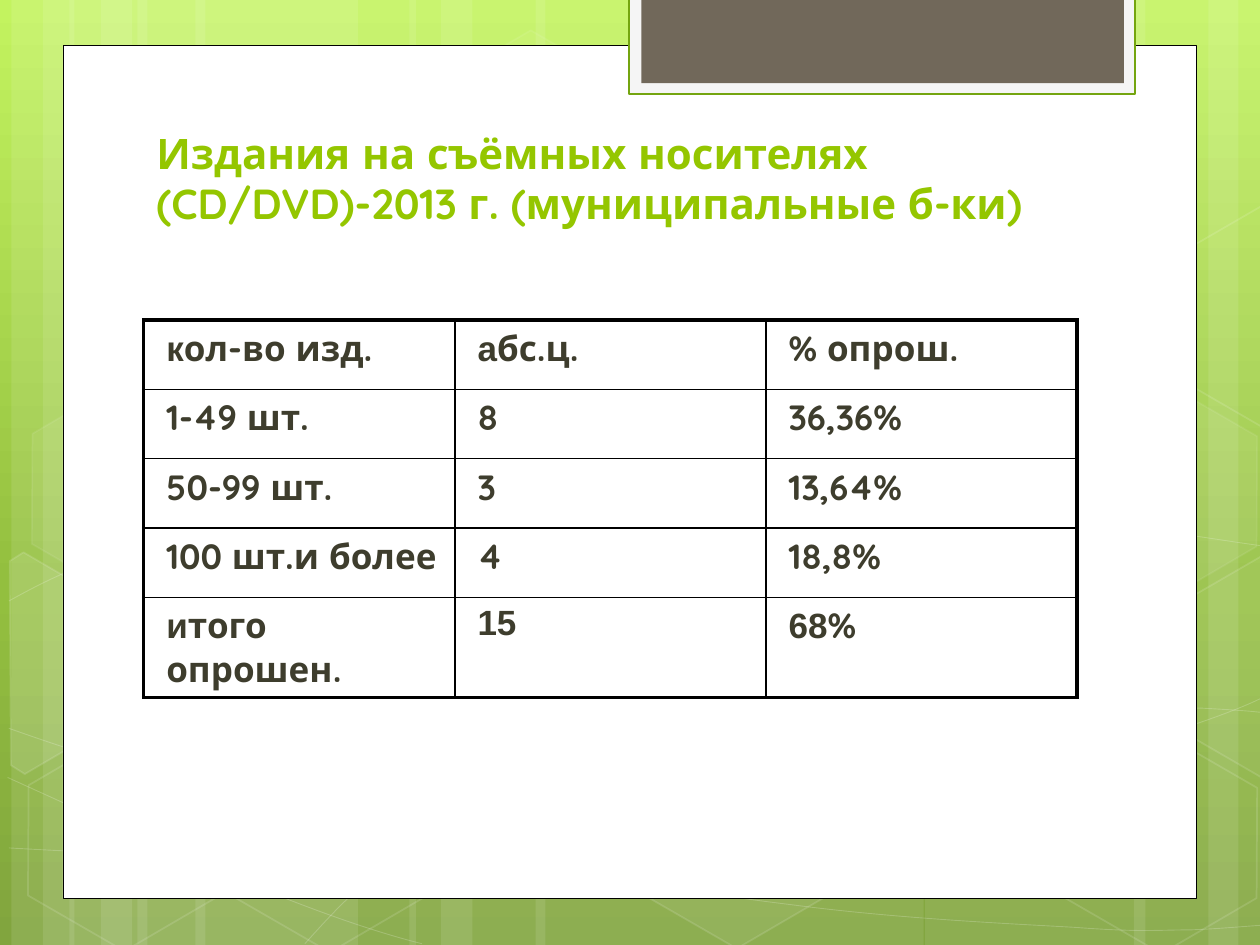
from copy import deepcopy
from dataclasses import dataclass
from math import cos, radians, sin

from lxml.etree import SubElement
from pptx import Presentation
from pptx.dml.color import RGBColor as RGB
from pptx.enum.shapes import MSO_SHAPE as SHAPE
from pptx.enum.text import MSO_ANCHOR, MSO_AUTO_SIZE, PP_ALIGN
from pptx.oxml.ns import qn
from pptx.util import Inches, Pt

COLS, ROWS = 10, 7.5
TILT = 30


@dataclass(frozen=True)
class Theme:
    white: str = "FFFFFF"
    black: str = "000000"
    frame: str = "F5F5F5"
    green: str = "74A510"
    brown: str = "71685A"
    title: str = "94C600"
    text: str = "3E3D2D"
    backdrop: tuple = ((0, "C3F35F"), (0.62, "93BF3F"), (1, "81A53E"))
    head_font: str = "Quicksand"
    plain_font: str = "Arial"
    title_size: float = 24
    text_size: float = 20
    thin: float = 1
    thick: float = 2.25


class Deck:
    def __init__(self, theme):
        self.theme = theme
        self.prs = Presentation()
        self.prs.slide_width = Inches(COLS)
        self.prs.slide_height = Inches(ROWS)
        self.col = self.prs.slide_width / COLS
        self.row = self.prs.slide_height / ROWS
        self.s = self.prs.slides.add_slide(self.prs.slide_layouts[5])

    def box(self, x, y, w, h):
        return [int(v) for v in (x * self.col, y * self.row, w * self.col, h * self.row)]

    def background(self):
        fill = self.s.background.fill
        fill.gradient()
        fill.gradient_angle = 270
        stops = next(self.s.background._cSld.iter(qn("a:gsLst")))
        stops.append(deepcopy(stops[-1]))
        for stop, (position, color) in zip(fill.gradient_stops, self.theme.backdrop):
            stop.color.rgb = RGB.from_string(color)
            stop.position = position

    def paint(self, fill, color, alpha):
        if not alpha:
            fill.background()
            return
        fill.solid()
        fill.fore_color.rgb = RGB.from_string(color)
        if alpha < 100:
            clr = fill._xPr.find(qn("a:solidFill"))[0]
            SubElement(clr, qn("a:alpha"), val=str(alpha * 1000))

    def style(self, sp, color, alpha, line, width, line_alpha):
        sp.shadow.inherit = False
        self.paint(sp.fill, color, alpha)
        self.paint(sp.line.fill, line, line_alpha)
        if line_alpha:
            sp.line.width = Pt(width)

    def shape(self, kind, at, color, alpha=100, line=None, width=1, line_alpha=0):
        sp = self.s.shapes.add_shape(kind, *self.box(*at))
        self.style(sp, color, alpha, line, width, line_alpha)
        return sp

    def hexagon(self, x, y, alpha, line_alpha):
        white = self.theme.white
        sp = self.shape(SHAPE.HEXAGON, (x, y, 1.75, 1.52), white, alpha, white, 1, line_alpha)
        sp.adjustments[0] = 0.285
        sp.rotation = TILT

    def outline(self, points, closed, alpha, width, line_alpha):
        pts = [(int(x * self.col), int(y * self.row)) for x, y in points]
        fb = self.s.shapes.build_freeform(*pts[0])
        fb.add_line_segments(pts[1:], close=closed)
        sp = fb.convert_to_shape()
        self.style(sp, self.theme.white, alpha, self.theme.white, width, line_alpha)
        return sp

    def curve(self, nodes):
        sp = self.outline(nodes, False, 0, 0.5, 20)
        lines = list(sp._element.iter(qn("a:lnTo")))
        for i in range(0, len(lines), 3):
            bezier = SubElement(lines[i].getparent(), qn("a:cubicBezTo"))
            for line in lines[i:i + 3]:
                bezier.append(line[0])
                line.getparent().remove(line)

    def cut_hexagon(self, points, center, alpha):
        cx, cy = center
        c, k = cos(radians(TILT)), sin(radians(TILT))
        upright = [(cx + (x - cx) * c + (y - cy) * k, cy - (x - cx) * k + (y - cy) * c)
                   for x, y in points]
        self.outline(upright, True, alpha, 1, 12).rotation = TILT

    def run(self, p, text, font, size, color):
        r = p.add_run()
        r.text = text
        r.font.name, r.font.size, r.font.bold = font, Pt(size), True
        r.font.color.rgb = RGB.from_string(color)

    def title(self, text, at):
        sp = self.s.shapes.title
        sp._element.getparent().append(sp._element)
        sp.left, sp.top, sp.width, sp.height = self.box(*at)
        tf = sp.text_frame
        tf.word_wrap = True
        tf.auto_size = MSO_AUTO_SIZE.NONE
        tf.vertical_anchor = MSO_ANCHOR.BOTTOM
        p = tf.paragraphs[0]
        p.alignment = PP_ALIGN.LEFT
        self.run(p, text, self.theme.head_font, self.theme.title_size, self.theme.title)

    def borders(self, cell, edges):
        tcPr = cell._tc.get_or_add_tcPr()
        for side, outer in edges:
            width = self.theme.thick if outer else self.theme.thin
            ln = SubElement(tcPr, qn(f"a:ln{side}"), w=str(Pt(width)))
            SubElement(SubElement(ln, qn("a:solidFill")), qn("a:srgbClr"), val=self.theme.black)

    def table(self, rows, at, row_height):
        n, m = len(rows), len(rows[0])
        frame = self.s.shapes.add_table(n, m, *self.box(*at))
        table = frame.table
        table.first_row = table.horz_banding = False
        for i, row in enumerate(rows):
            table.rows[i].height = int(row_height * self.row)
            for j, (plain, styled) in enumerate(row):
                cell = table.cell(i, j)
                self.borders(cell, (("L", j == 0), ("R", j == m - 1),
                                    ("T", i == 0), ("B", i == n - 1)))
                cell.fill.background()
                p = cell.text_frame.paragraphs[0]
                p.space_before = Pt(self.theme.text_size * 0.2)
                pPr = p._p.get_or_add_pPr()
                pPr.set("marL", str(Inches(0.08)))
                pPr.set("indent", "0")
                for text, font in ((plain, self.theme.plain_font), (styled, self.theme.head_font)):
                    if text:
                        self.run(p, text, font, self.theme.text_size, self.theme.text)
        frame.height = int(at[3] * self.row)


STRIPES = [(x + shift, w) for shift in (0, 0.46)
           for x, w in ((1.09, 1.75), (0.09, 0.5), (0.34, 0.83))]
STRIPES += [(7.34, 1.75), (9.59, 0.5), (9, 0.83), (4.25, 3.08), (3.25, 0.5), (3.5, 0.83)]
CURVES = [
    [(0.07, 6.73), (0.61, 6.76), (1.15, 6.79), (1.9, 6.78), (2.65, 6.77), (3.58, 6.75),
     (4.58, 6.65), (5.58, 6.55), (7, 6.36), (7.92, 6.17), (8.83, 5.98), (9.77, 5.68), (10.07, 5.51)],
    [(0.07, 4.77), (0.36, 4.61), (0.65, 4.46), (1.21, 4.31), (1.78, 4.16), (2.59, 3.94),
     (3.47, 3.87), (4.36, 3.8), (5.44, 3.79), (6.54, 3.87), (7.64, 3.95), (9.47, 4.26), (10.07, 4.34)],
    [(0.06, 6.17), (1.27, 6.72), (2.47, 7.27), (3.35, 7.49)],
    [(0.07, 5.78), (0.38, 5.89), (0.7, 6), (1.28, 6.16), (1.86, 6.31), (2.73, 6.56),
     (3.57, 6.73), (4.4, 6.9), (5.45, 7.08), (6.28, 7.18), (7.11, 7.29), (8, 7.33),
     (8.53, 7.36), (9.06, 7.4), (9.19, 7.38), (9.45, 7.38), (9.71, 7.37), (9.89, 7.35), (10.07, 7.34)],
    [(2.42, 7.49), (2.6, 7.29), (2.78, 7.09), (3.02, 6.91), (3.26, 6.72), (3.6, 6.53),
     (3.88, 6.39), (4.16, 6.25), (4.33, 6.19), (4.69, 6.09), (5.06, 5.99), (5.73, 5.85),
     (6.08, 5.78), (6.44, 5.71), (6.49, 5.71), (6.8, 5.69), (7.11, 5.66), (7.6, 5.63),
     (7.94, 5.62), (8.29, 5.61), (8.86, 5.62), (8.86, 5.62), (9.08, 5.62), (9.31, 5.62),
     (9.53, 5.62), (9.71, 5.63), (9.88, 5.64), (9.97, 5.65), (10.06, 5.66), (10.03, 5.65), (10.06, 5.66)],
]
HEXAGONS = [(3.34, 0.36, 4, 8), (4.97, 5.89, 6, 12), (0.11, 5.91, 0, 12), (0.14, 3.12, 7, 8),
            (1.74, 5.92, 0, 12), (7.53, 4.53, 10, 12), (8.34, 5.93, 0, 12), (8.34, 3.14, 7, 8)]
CUT_HEXAGONS = [
    ([(0.08, 4.45), (0.19, 4.38), (0.96, 4.83), (0.95, 5.7), (0.2, 6.14), (0.09, 6.07)],
     (0.36, 5.36), 10),
    ([(9.26, 4.85), (10.02, 4.41), (10.09, 4.46), (10.09, 6.13), (10.02, 6.17), (9.26, 5.73)],
     (9.85, 5.2), 4),
    ([(9.26, 2.07), (10.02, 1.63), (10.1, 1.68), (10.09, 3.35), (10.02, 3.39), (9.26, 2.95)],
     (9.85, 2.41), 0),
]
EDITIONS = [
    [("к", "ол-во изд."), ("а", "бс.ц."), ("", "% опрош.")],
    [("", "1-49 шт."), ("", "8"), ("", "36,36%")],
    [("", "50-99 шт."), ("", "3"), ("", "13,64%")],
    [("", "100 шт.и более"), ("", "4"), ("", "18,8%")],
    [("и", "того опрошен."), ("15", ""), ("68", "%")],
]


def main():
    theme = Theme()
    deck = Deck(theme)
    deck.background()
    for x, w in STRIPES:
        deck.shape(SHAPE.RECTANGLE, (x, 0, w, ROWS), theme.white, 10)
    for nodes in CURVES:
        deck.curve(nodes)
    for hexagon in HEXAGONS:
        deck.hexagon(*hexagon)
    for cut in CUT_HEXAGONS:
        deck.cut_hexagon(*cut)
    deck.shape(SHAPE.RECTANGLE, (0.5, 0.36, 9, 6.77), theme.white, 100, theme.black, 0.5, 100)
    deck.shape(SHAPE.RECTANGLE, (4.99, -0.02, 4.02, 0.77), theme.frame, 100, theme.green, 1.25, 100)
    deck.shape(SHAPE.RECTANGLE, (5.09, -0.02, 3.83, 0.68), theme.brown)
    deck.title("Издания на съёмных носителях (CD/DVD)-2013 г. (муниципальные б-ки)",
               (1.14, 1.12, 7.68, 0.74))
    deck.table(EDITIONS, (1.14, 2.54, 7.41, 2.96), 0.55)
    deck.prs.save("out.pptx")


if __name__ == "__main__":
    main()
